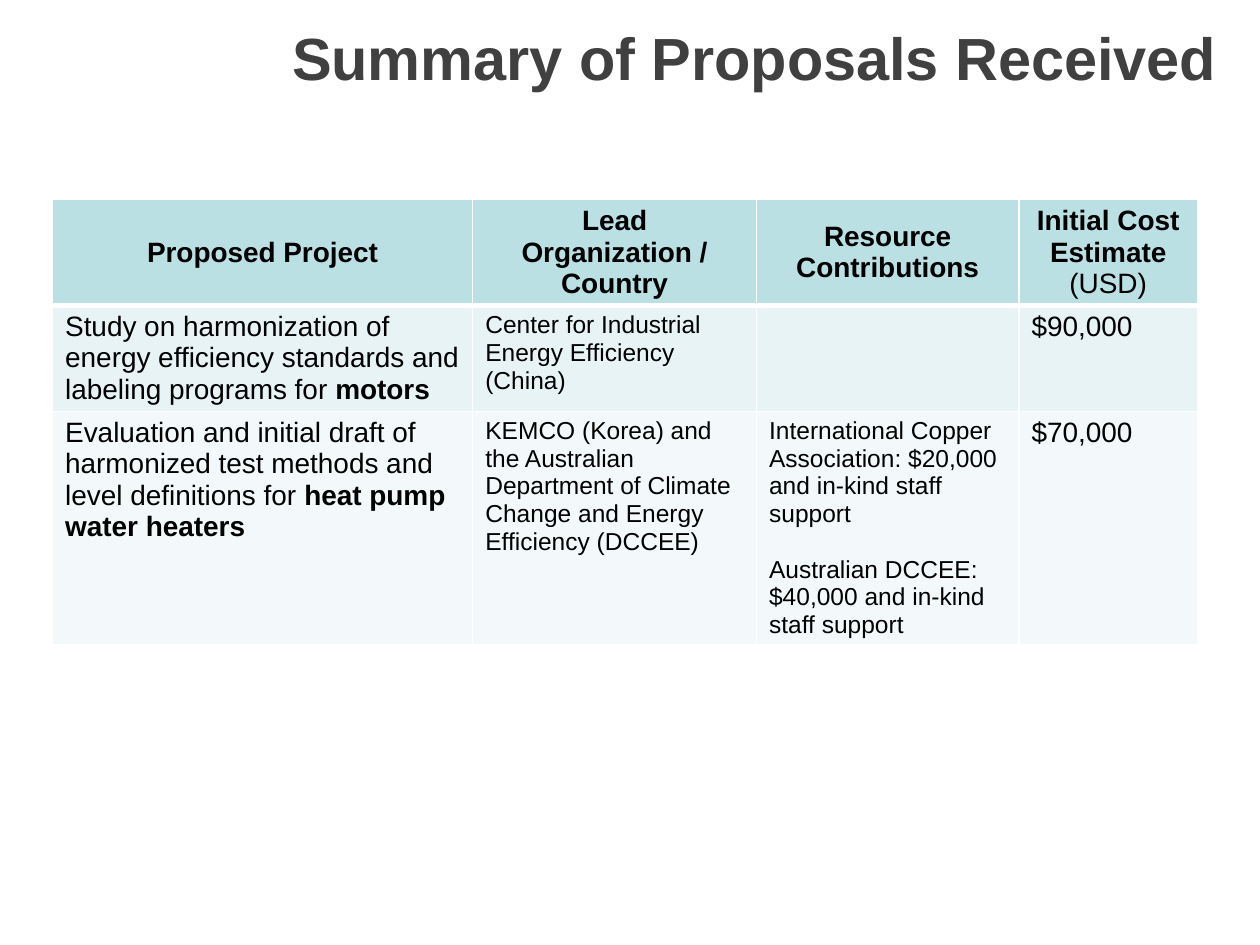
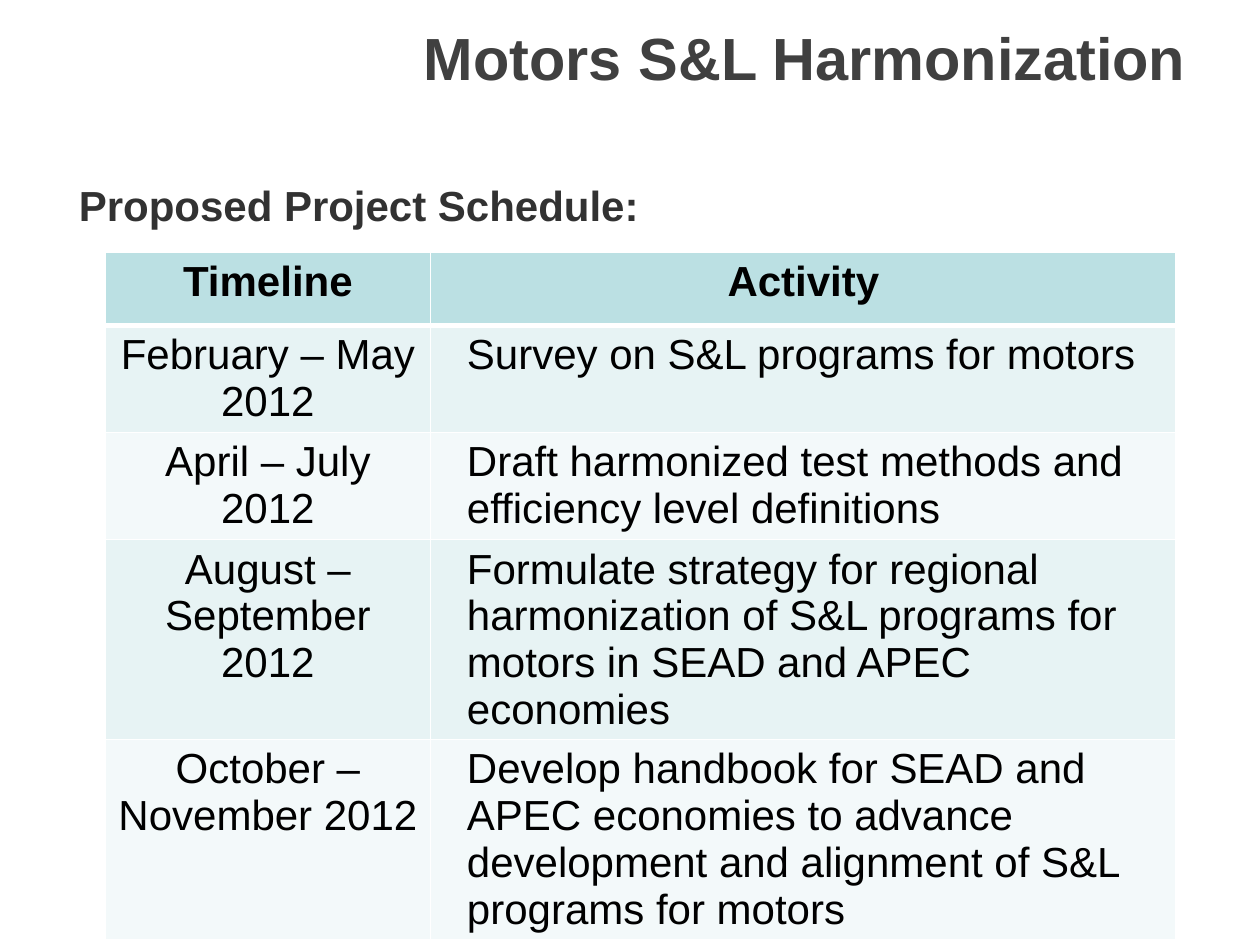
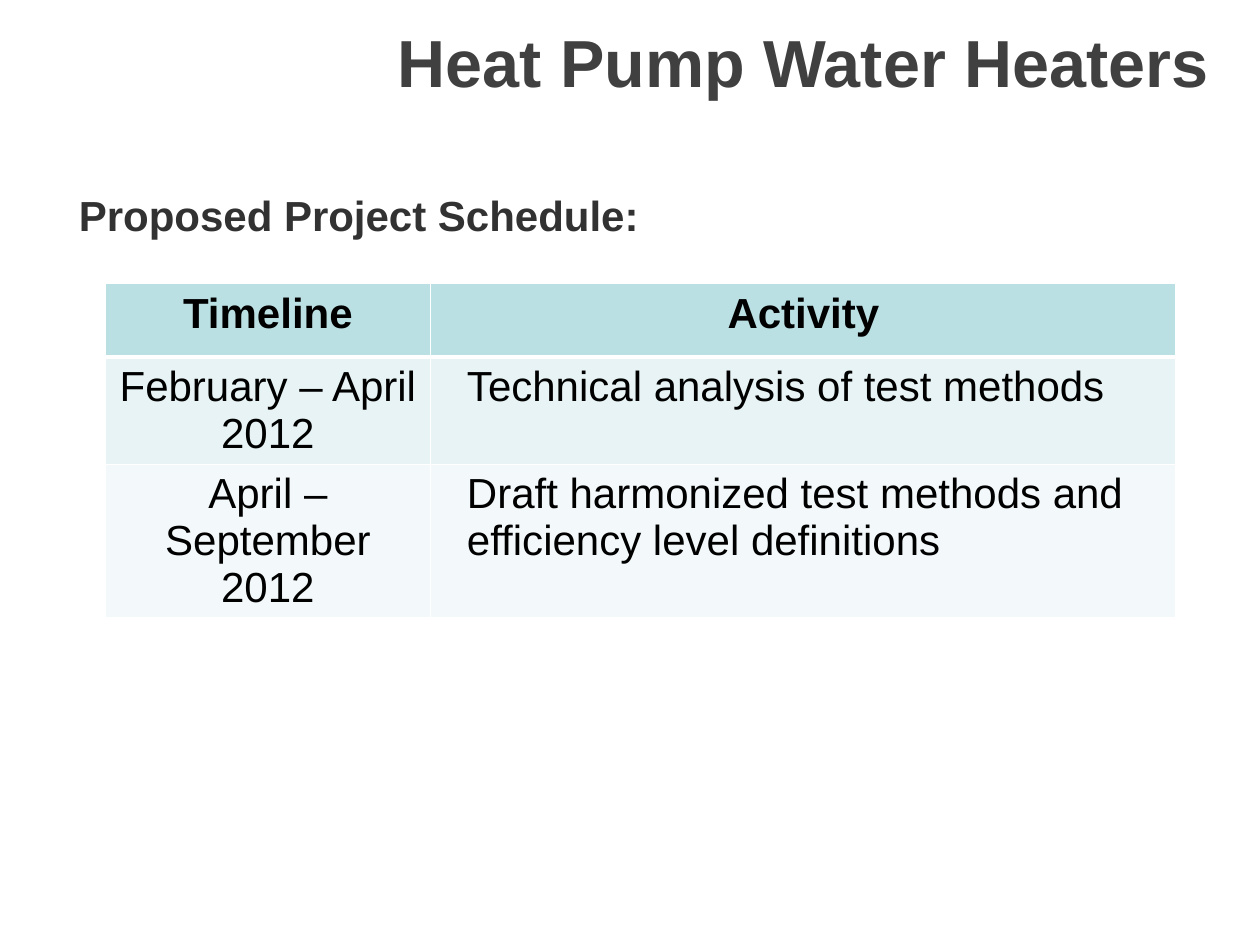
"""Builds three slides on proposed harmonization projects and their schedules."""
from dataclasses import dataclass

import pptx
import pptx.dml.color
import pptx.enum.text
import pptx.oxml
import pptx.oxml.ns
import pptx.util

Cm = pptx.util.Cm
Pt = pptx.util.Pt
ALIGN = pptx.enum.text.PP_ALIGN
ANCHOR = pptx.enum.text.MSO_ANCHOR


@dataclass(frozen=True)
class Theme:
    font: str = "Arial"
    title: str = "404040"
    heading: str = "323232"
    text: str = "000000"
    header: str = "BBE0E3"
    bands: tuple = ("E7F3F4", "F3F9FA")
    border: str = "FFFFFF"
    title_size: int = 34
    big_title_size: int = 38
    schedule_size: int = 24
    summary_size: int = 16
    detail_size: int = 14


T = Theme()
LEFT, TITLE_TOP, TITLE_HEIGHT, INSET = 1.06, 0.2, 2.12, 0.23

SUMMARY = [
    ("Proposed Project", "Lead Organization / Country", "Resource Contributions",
     "Initial Cost Estimate *(USD)*"),
    ("Study on harmonization of energy efficiency standards and labeling programs for *motors*",
     "Center for Industrial Energy Efficiency (China)", "", "$90,000"),
    ("Evaluation and initial draft of harmonized test methods and level definitions for "
     "*heat pump water heaters*",
     "KEMCO (Korea) and the Australian Department of Climate Change and Energy Efficiency (DCCEE)",
     "International Copper Association: $20,000 and in-kind staff support\n"
     "Australian DCCEE: $40,000 and in-kind staff support", "$70,000"),
]
SUMMARY_COLUMNS = [
    dict(width=8.47, size=T.summary_size),
    dict(width=5.72, size=T.detail_size),
    dict(width=5.29, size=T.detail_size, gap=16),
    dict(width=3.6, size=T.summary_size),
]

SCHEDULE_HEADER = ("Timeline", "Activity")
SCHEDULE_COLUMNS = [
    dict(width=6.56, size=T.schedule_size, align=ALIGN.CENTER),
    dict(width=15.03, size=T.schedule_size, indent=0.48),
]
SCHEDULES = [
    dict(title="Motors S&L Harmonization", title_width=23.07, title_size=T.title_size,
         heading_top=3.39, table_top=5.08, rows=[
             ("February – May 2012", "Survey on S&L programs for motors"),
             ("April – July 2012",
              "Draft harmonized test methods and efficiency level definitions"),
             ("August – September 2012",
              "Formulate strategy for regional harmonization of S&L programs for motors "
              "in SEAD and APEC economies"),
             ("October – November 2012",
              "Develop handbook for SEAD and APEC economies to advance development and "
              "alignment of S&L programs for motors"),
         ]),
    dict(title="Heat Pump Water Heaters ", title_width=23.92, title_size=T.big_title_size,
         heading_top=3.6, table_top=5.72, rows=[
             ("February – April 2012", "Technical analysis of test methods"),
             ("April – September 2012",
              "Draft harmonized test methods and efficiency level definitions"),
         ]),
]


def rgb(value):
    return pptx.dml.color.RGBColor.from_string(value)


def write(tf, text, size, color=T.text, bold=False, align=ALIGN.LEFT, indent=0, gap=0):
    """Write lines as paragraphs; asterisks switch bold on and off."""
    for i, line in enumerate(text.split("\n")):
        p = tf.add_paragraph() if i else tf.paragraphs[0]
        p.alignment = align
        p.space_before = Pt(gap if i else 0)
        if indent:
            pPr = p._p.get_or_add_pPr()
            pPr.set("marL", str(Cm(indent)))
            pPr.set("indent", "0")
        p.font.size = Pt(size)
        for j, part in enumerate(line.split("*")):
            if part:
                r = p.add_run()
                r.text = part
                r.font.name = T.font
                r.font.size = Pt(size)
                r.font.bold = bold != bool(j % 2)
                r.font.color.rgb = rgb(color)


def frame(sp):
    tf = sp.text_frame
    tf.word_wrap = True
    tf.auto_size = pptx.enum.text.MSO_AUTO_SIZE.NONE
    tf.vertical_anchor = ANCHOR.TOP
    tf.margin_left = tf.margin_right = tf.margin_top = tf.margin_bottom = Cm(INSET)
    return tf


def add_slide(prs, title, width, size=T.title_size):
    s = prs.slides.add_slide(prs.slide_layouts[5])
    sp = s.shapes.title
    sp.left, sp.top, sp.width, sp.height = map(Cm, (LEFT, TITLE_TOP, width, TITLE_HEIGHT))
    write(frame(sp), title, size, color=T.title, bold=True, align=ALIGN.RIGHT)
    return s


def set_borders(cell, top, bottom):
    tcPr = cell._tc.get_or_add_tcPr()
    for side, width in (("L", 1), ("R", 1), ("T", top), ("B", bottom)):
        tcPr.append(pptx.oxml.parse_xml(
            f'<a:ln{side} {pptx.oxml.ns.nsdecls("a")} w="{Pt(width)}"><a:solidFill>'
            f'<a:srgbClr val="{T.border}"/></a:solidFill></a:ln{side}>'))


def add_table(s, rows, columns, left, top, heights, header_size, header_anchor):
    width = sum(c["width"] for c in columns)
    table = s.shapes.add_table(len(rows), len(columns), Cm(left), Cm(top),
                               Cm(width), Cm(sum(heights))).table
    table.first_row = table.horz_banding = False
    for column, c in zip(table.columns, columns):
        column.width = Cm(c["width"])
    for i, row in enumerate(rows):
        table.rows[i].height = Cm(heights[i])
        for j, text in enumerate(row):
            cell = table.cell(i, j)
            set_borders(cell, top=3 if i == 1 else 1, bottom=1 if i else 3)
            cell.fill.solid()
            cell.fill.fore_color.rgb = rgb(T.bands[(i - 1) % 2] if i else T.header)
            if i:
                style = {k: v for k, v in columns[j].items() if k != "width"}
            else:
                style = dict(size=header_size, bold=True, align=ALIGN.CENTER)
                cell.vertical_anchor = header_anchor
            write(cell.text_frame, text, **style)


def add_summary(prs):
    s = add_slide(prs, "Summary of Proposals Received", 23.7)
    add_table(s, SUMMARY, SUMMARY_COLUMNS, LEFT, 4.02, [1.04] * len(SUMMARY),
              T.summary_size, ANCHOR.MIDDLE)


def add_schedule(prs, plan):
    s = add_slide(prs, plan["title"], plan["title_width"], plan["title_size"])
    top = plan["heading_top"]
    sp = s.shapes.add_textbox(Cm(LEFT), Cm(top), Cm(23.07), Cm(18.42 - top))
    write(frame(sp), "Proposed Project Schedule:", T.schedule_size,
          color=T.heading, bold=True, indent=0.3)
    rows = [SCHEDULE_HEADER] + plan["rows"]
    add_table(s, rows, SCHEDULE_COLUMNS, 2.12, plan["table_top"],
              [1.48] + [2.16] * len(plan["rows"]), T.schedule_size, ANCHOR.TOP)


def main():
    prs = pptx.Presentation()
    prs.slide_width, prs.slide_height = Cm(25.4), Cm(19.05)
    add_summary(prs)
    for plan in SCHEDULES:
        add_schedule(prs, plan)
    prs.save("out.pptx")


if __name__ == "__main__":
    main()
